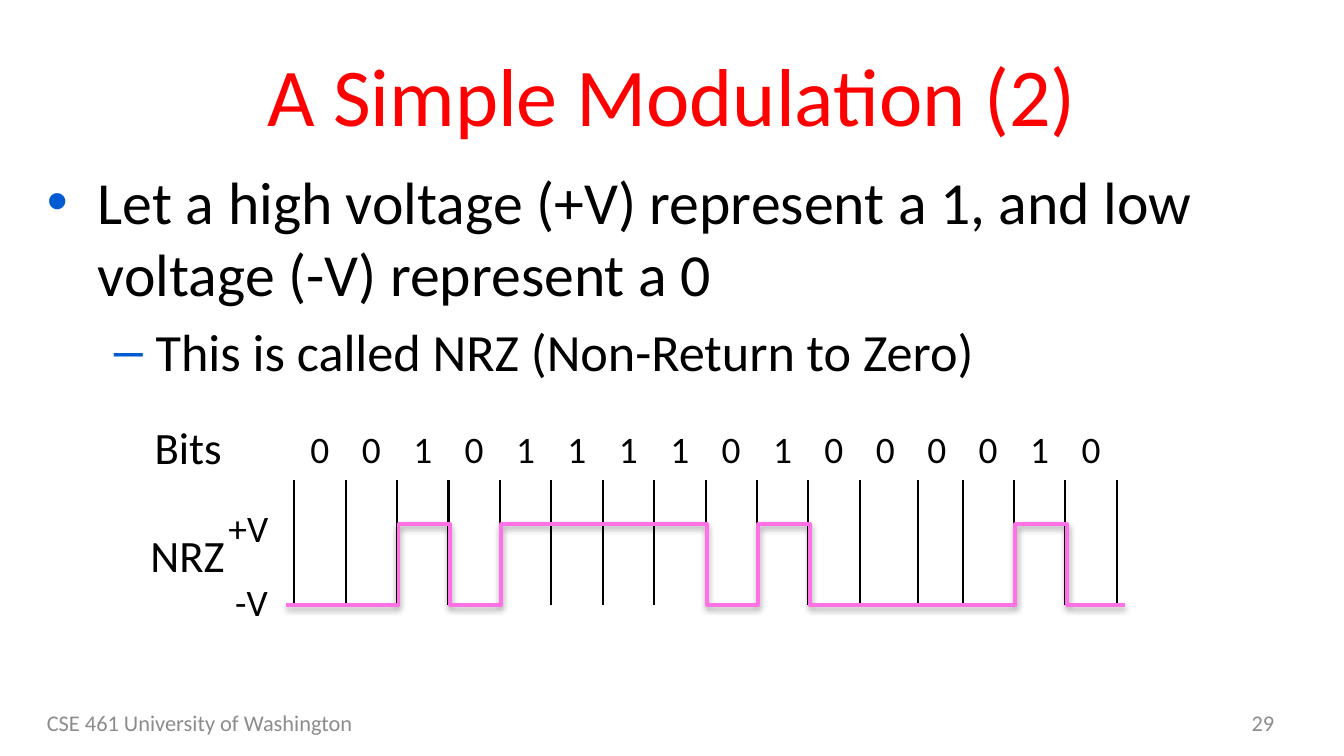
import pptx
import pptx.dml.color
import pptx.enum.shapes
import pptx.enum.text
import pptx.oxml.ns
import pptx.util
from lxml import etree

Inches, Pt = pptx.util.Inches, pptx.util.Pt
RGBColor = pptx.dml.color.RGBColor
qn = pptx.oxml.ns.qn
ALIGN = pptx.enum.text.PP_ALIGN
ANCHOR = pptx.enum.text.MSO_ANCHOR

RED = RGBColor(0xFF, 0x00, 0x00)
BLACK = RGBColor(0x00, 0x00, 0x00)
GRAY = RGBColor(0x8C, 0x8C, 0x8C)
BLUE = RGBColor(0x00, 0x5B, 0xD3)
PINK = RGBColor(0xFF, 0x71, 0xE5)

# words, box, size, colour, alignment
FRAME = [
    ("A Simple Modulation (2)", (0.25, 0.23, 9.5, 0.94), 44, RED, ALIGN.CENTER),
    ("CSE 461 University of Washington", (0.25, 5.23, 3.17, 0.3), 12, GRAY, ALIGN.LEFT),
    ("29", (7.25, 5.23, 2.33, 0.3), 12, GRAY, ALIGN.RIGHT),
]
BODY = (0.25, 1.18, 9.5, 3.71)
# words, level, size, bullet, left margin, hanging indent
POINTS = [
    ("Let a high voltage (+V) represent a 1, and low voltage (-V) represent a 0",
     0, 32, "•", 0.38, 0.38),
    ("This is called NRZ (Non-Return to Zero)", 1, 28, "–", 0.81, 0.31),
]
LABELS = [
    ("Bits", (1.15, 3.12, 0.5, 0.4), 24),
    ("NRZ", (1.12, 3.93, 0.56, 0.4), 24),
    ("+V", (1.7, 3.76, 0.3, 0.34), 20),
    ("-V", (1.75, 4.31, 0.25, 0.34), 20),
]
BITS = "0010111101000010"
LEFT, RIGHT = 2.19, 8.31
STEP = (RIGHT - LEFT) / len(BITS)
TOP, HIGH, LOW = 3.57, 3.9, 4.5
LEAD = 0.06          # wave overhang at both ends
NUDGE = {12: 0.05}   # tick drawn off the grid


def add_box(slide, box, anchor=ANCHOR.TOP, tight=False):
    frame = slide.shapes.add_textbox(*map(Inches, box)).text_frame
    frame.word_wrap = not tight
    frame.vertical_anchor = anchor
    if tight:
        frame.margin_left = frame.margin_right = 0
        frame.margin_top = frame.margin_bottom = 0
        frame.auto_size = pptx.enum.text.MSO_AUTO_SIZE.SHAPE_TO_FIT_TEXT
    return frame


def write(para, words, size, color=BLACK, align=ALIGN.LEFT):
    para.text = words
    para.alignment = align
    para.font.name = "Calibri"
    para.font.size = Pt(size)
    para.font.color.rgb = color


def add_bullet(para, mark, margin, hang):
    props = para._p.get_or_add_pPr()
    props.set("marL", str(Inches(margin)))
    props.set("indent", str(-Inches(hang)))
    tint = etree.Element(qn("a:buClr"))
    etree.SubElement(tint, qn("a:srgbClr"), val=str(BLUE))
    face = etree.Element(qn("a:buFont"), typeface="Arial")
    char = etree.Element(qn("a:buChar"), char=mark)
    rest = props.find(qn("a:defRPr"))
    for part in (tint, face, char):
        rest.addprevious(part)


def add_points(slide):
    frame = add_box(slide, BODY)
    for i, (words, level, size, mark, margin, hang) in enumerate(POINTS):
        para = frame.add_paragraph() if i else frame.paragraphs[0]
        write(para, words, size)
        para.level = level
        para.space_before = Pt(size * 0.2)
        add_bullet(para, mark, margin, hang)


def add_tick(slide, x):
    kind = pptx.enum.shapes.MSO_CONNECTOR.STRAIGHT
    tick = slide.shapes.add_connector(
        kind, Inches(x), Inches(TOP), Inches(x), Inches(LOW))
    tick.line.color.rgb = BLACK
    tick.line.width = Pt(1.13)
    etree.SubElement(tick._element.spPr, qn("a:effectLst"))


def add_wave(slide):
    """Draw the NRZ signal, turning only where the bit changes."""
    level = {"0": LOW, "1": HIGH}
    spots = [(LEFT - LEAD, level[BITS[0]])]
    for i in range(1, len(BITS)):
        if BITS[i] != BITS[i - 1]:
            x = LEFT + i * STEP + 0.01
            spots += [(x, level[BITS[i - 1]]), (x, level[BITS[i]])]
    spots.append((RIGHT + LEAD, level[BITS[-1]]))
    spots = [(Inches(x), Inches(y)) for x, y in spots]
    pen = slide.shapes.build_freeform(*spots[0])
    pen.add_line_segments(spots[1:], close=False)
    wave = pen.convert_to_shape()
    wave.fill.background()
    wave.line.color.rgb = PINK
    wave.line.width = Pt(2)
    wave.shadow.inherit = False
    effects = wave._element.spPr.find(qn("a:effectLst"))
    shade = etree.SubElement(
        effects, qn("a:outerShdw"), blurRad=str(Pt(3.1)), dist=str(Pt(1.6)),
        dir="5400000", rotWithShape="0")
    tint = etree.SubElement(shade, qn("a:srgbClr"), val=str(BLACK))
    etree.SubElement(tint, qn("a:alpha"), val="38000")


def main():
    deck = pptx.Presentation()
    deck.slide_width = Inches(10)
    deck.slide_height = deck.slide_width * 9 // 16
    slide = deck.slides.add_slide(deck.slide_layouts[6])

    for words, box, size, color, align in FRAME:
        frame = add_box(slide, box, ANCHOR.MIDDLE)
        write(frame.paragraphs[0], words, size, color, align)
    add_points(slide)

    digits = [(bit, (LEFT + 0.12 + i * STEP, 3.17, 0.14, 0.34), 20)
              for i, bit in enumerate(BITS)]
    for words, box, size in LABELS + digits:
        write(add_box(slide, box, tight=True).paragraphs[0], words, size)
    for i in range(len(BITS) + 1):
        add_tick(slide, LEFT + i * STEP + NUDGE.get(i, 0))
    add_wave(slide)
    deck.save("out.pptx")


if __name__ == "__main__":
    main()
